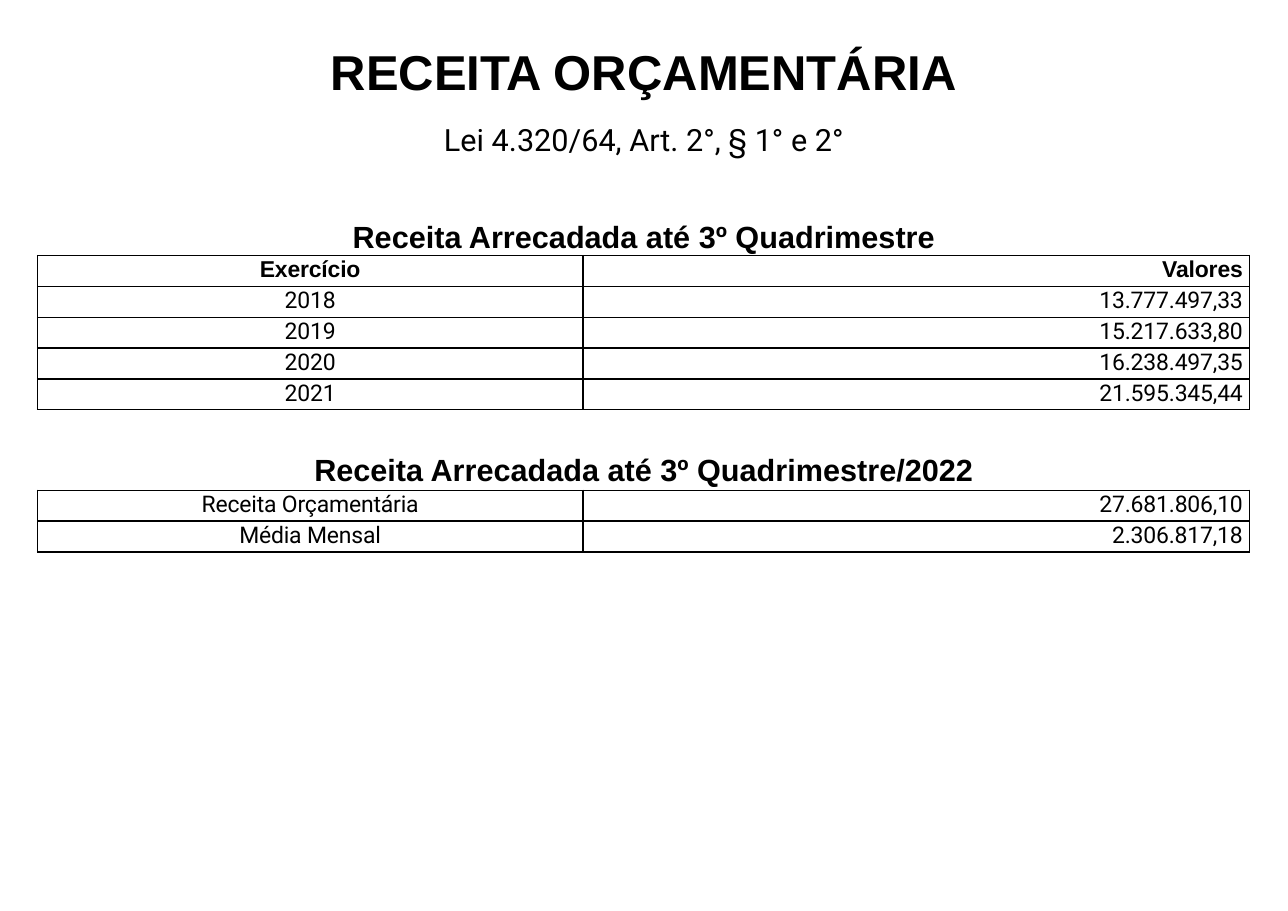
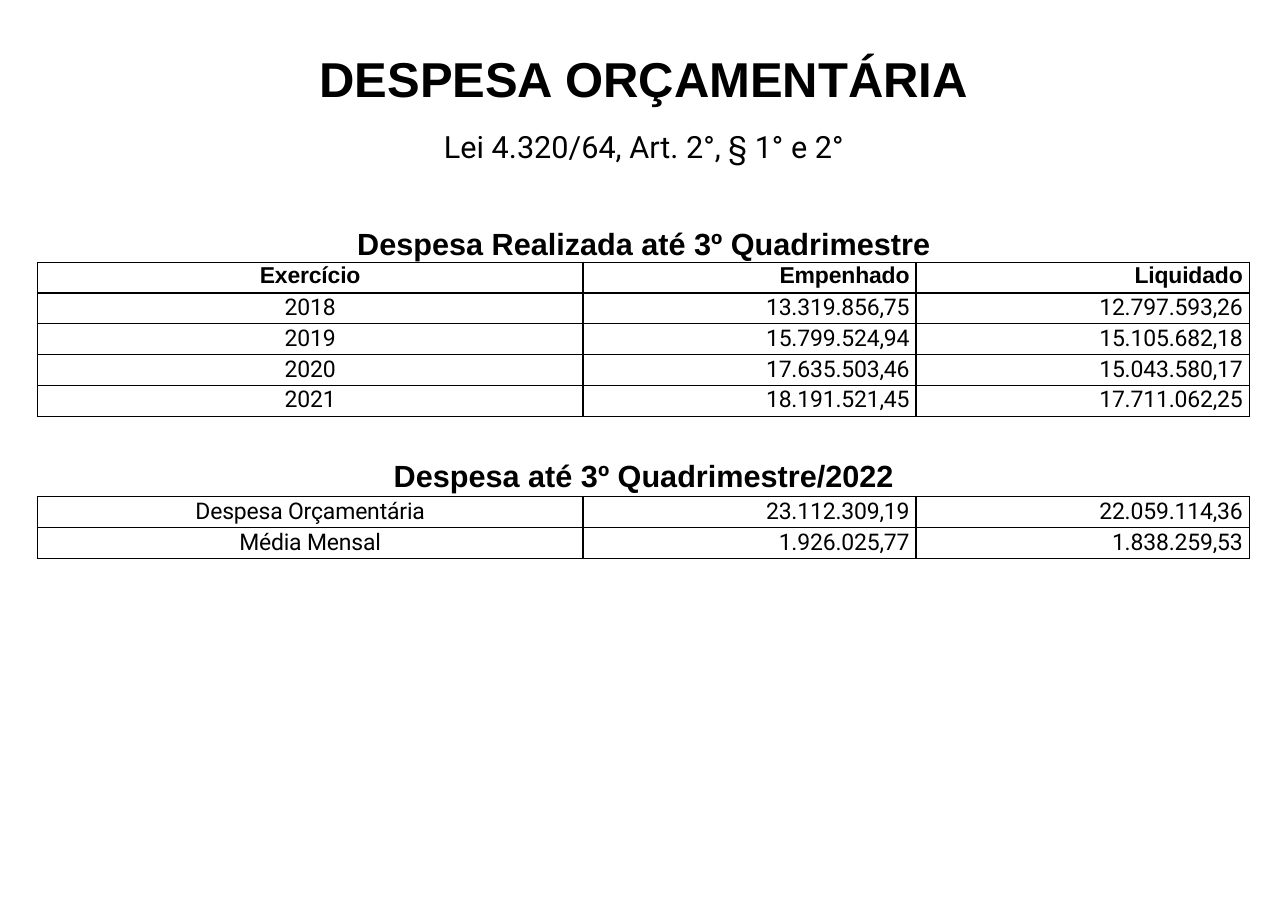
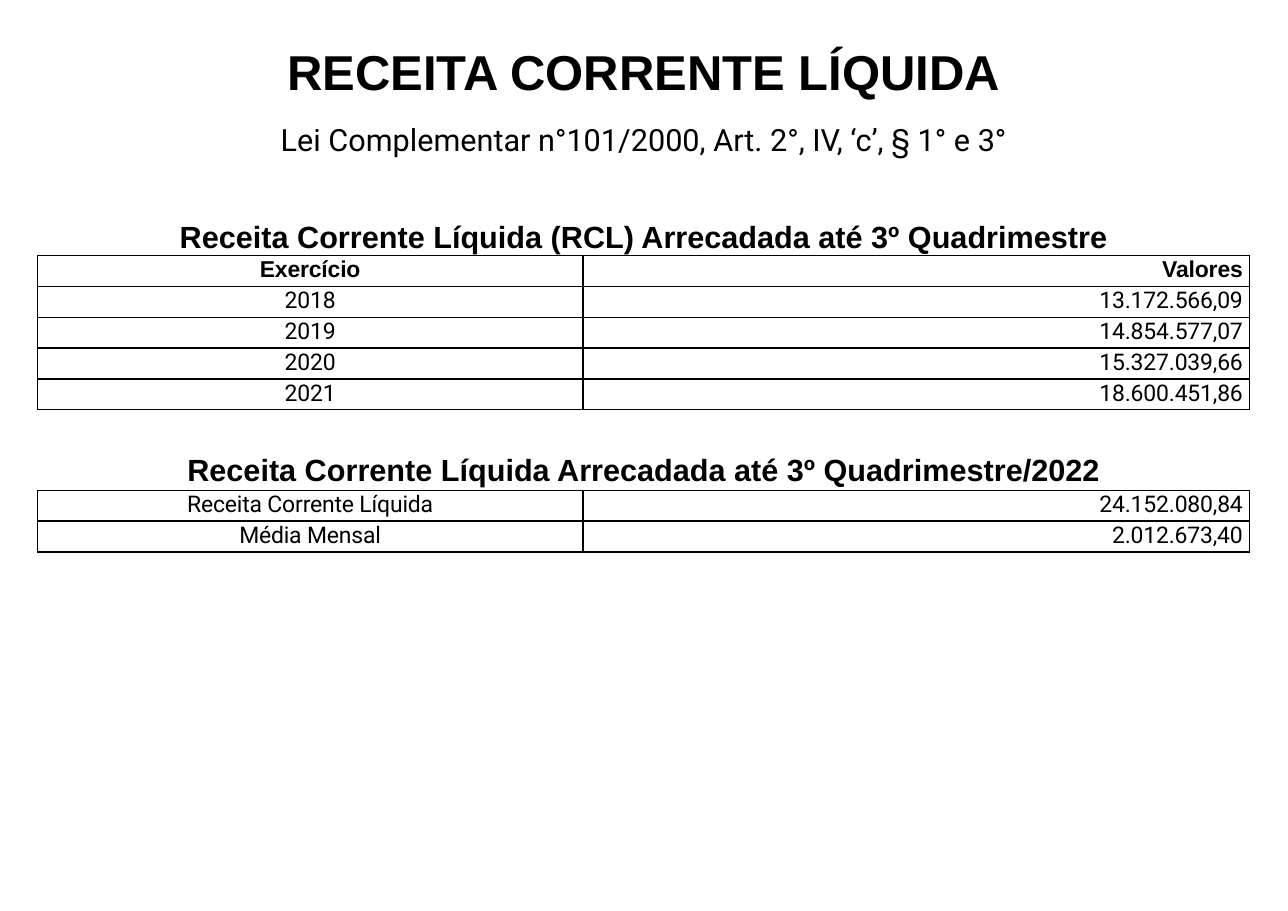
"""Builds three slides of budget tables: revenue, expenditure and net current revenue."""
import lxml.etree
import pptx
import pptx.dml.color
import pptx.enum.text
import pptx.oxml.ns
import pptx.util

Inches = pptx.util.Inches
Pt = pptx.util.Pt
ALIGN = pptx.enum.text.PP_ALIGN


def color(value):
    return pptx.dml.color.RGBColor.from_string(value)


class BudgetDeck:
    WIDTH, HEIGHT = 11.69, 8.27
    INK = "000000"
    BOLD_FONT, BODY_FONT = "Arial", "Roboto"
    TITLE_SIZE, HEADING_SIZE, CELL_SIZE = 32, 20, 15
    TABLE_LEFT, LABEL_WIDTH, VALUES_WIDTH, ROW_HEIGHT = 0.34, 4.95, 6.05, 0.28

    def __init__(self):
        self.deck = pptx.Presentation()
        self.deck.slide_width = Inches(self.WIDTH)
        self.deck.slide_height = Inches(self.HEIGHT)
        self.page = None

    def add_page(self):
        self.page = self.deck.slides.add_slide(self.deck.slide_layouts[6])

    def add_text(self, para, text, size, bold, align, before, spacing=0):
        para.alignment = align
        para.space_before = Pt(before)
        span = para.add_run()
        span.text = text
        span.font.name = self.BOLD_FONT if bold else self.BODY_FONT
        span.font.size = Pt(size)
        span.font.bold = bold
        span.font.color.rgb = color(self.INK)
        if spacing:
            span.font._element.set("spc", str(round(spacing * 100)))

    def centred_text(self, top, width, height, lines):
        left = (self.WIDTH - width) / 2
        box = self.page.shapes.add_textbox(Inches(left), Inches(top), Inches(width), Inches(height))
        frame = box.text_frame
        frame.word_wrap = True
        frame.margin_left = frame.margin_right = frame.margin_bottom = 0
        frame.margin_top = Inches(0.01)
        for index, (text, size, bold, before) in enumerate(lines):
            para = frame.add_paragraph() if index else frame.paragraphs[0]
            self.add_text(para, text, size, bold, ALIGN.CENTER, before)

    def title(self, top, width, text):
        self.centred_text(top, width, 0.56, [(text, self.TITLE_SIZE, True, 1)])

    def law_and_heading(self, top, width, law, heading):
        self.centred_text(top, width, 1.23, [
            (law, self.HEADING_SIZE, False, 1),
            (heading, self.HEADING_SIZE, True, 39.5),
        ])

    def heading(self, top, width, text):
        self.centred_text(top, width, 0.36, [(text, self.HEADING_SIZE, True, 1)])

    def border(self, cell):
        properties = cell._tc.get_or_add_tcPr()
        for side in ("a:lnL", "a:lnR", "a:lnT", "a:lnB"):
            line = lxml.etree.SubElement(properties, pptx.oxml.ns.qn(side), w=str(Pt(1)))
            fill = lxml.etree.SubElement(line, pptx.oxml.ns.qn("a:solidFill"))
            lxml.etree.SubElement(fill, pptx.oxml.ns.qn("a:srgbClr"), val=self.INK)

    def table(self, top, rows, header=False):
        value_count = len(rows[0]) - 1
        widths = [self.LABEL_WIDTH] + [self.VALUES_WIDTH / value_count] * value_count
        table = self.page.shapes.add_table(
            len(rows), len(widths), Inches(self.TABLE_LEFT), Inches(top),
            Inches(sum(widths)), Inches(self.ROW_HEIGHT * len(rows))).table
        table.first_row = header
        table.horz_banding = False
        for column, width in zip(table.columns, widths):
            column.width = Inches(width)
        for row_index, row in enumerate(rows):
            for column_index, text in enumerate(row):
                cell = table.cell(row_index, column_index)
                is_value = column_index > 0
                cell.margin_left = cell.margin_bottom = 0
                cell.margin_right = Inches(0.06 if is_value else 0)
                cell.margin_top = Inches(0.01)
                self.border(cell)
                cell.fill.background()
                self.add_text(cell.text_frame.paragraphs[0], text, self.CELL_SIZE,
                              header and row_index == 0,
                              ALIGN.RIGHT if is_value else ALIGN.CENTER, 0.6, -0.1)


BUDGET_LAW = "Lei 4.320/64, Art. 2°, § 1° e 2°"

PAGES = [
    {
        "top": 0.37,
        "title": (5.76, "RECEITA ORÇAMENTÁRIA"),
        "history_heading": (5.32, BUDGET_LAW, "Receita Arrecadada até 3º Quadrimestre"),
        "history": [
            ("Exercício", "Valores"),
            ("2018", "13.777.497,33"),
            ("2019", "15.217.633,80"),
            ("2020", "16.238.497,35"),
            ("2021", "21.595.345,44"),
        ],
        "current_heading": (6.01, "Receita Arrecadada até 3º Quadrimestre/2022"),
        "current": [
            ("Receita Orçamentária", "27.681.806,10"),
            ("Média Mensal", "2.306.817,18"),
        ],
    },
    {
        "top": 0.43,
        "title": (5.93, "DESPESA ORÇAMENTÁRIA"),
        "history_heading": (5.22, BUDGET_LAW, "Despesa Realizada até 3º Quadrimestre"),
        "history": [
            ("Exercício", "Empenhado", "Liquidado"),
            ("2018", "13.319.856,75", "12.797.593,26"),
            ("2019", "15.799.524,94", "15.105.682,18"),
            ("2020", "17.635.503,46", "15.043.580,17"),
            ("2021", "18.191.521,45", "17.711.062,25"),
        ],
        "current_heading": (4.56, "Despesa até 3º Quadrimestre/2022"),
        "current": [
            ("Despesa Orçamentária", "23.112.309,19", "22.059.114,36"),
            ("Média Mensal", "1.926.025,77", "1.838.259,53"),
        ],
    },
    {
        "top": 0.37,
        "title": (6.55, "RECEITA CORRENTE LÍQUIDA"),
        "history_heading": (8.45, "Lei Complementar n°101/2000, Art. 2°, IV, ‘c’, § 1° e 3°",
                            "Receita Corrente Líquida (RCL) Arrecadada até 3º Quadrimestre"),
        "history": [
            ("Exercício", "Valores"),
            ("2018", "13.172.566,09"),
            ("2019", "14.854.577,07"),
            ("2020", "15.327.039,66"),
            ("2021", "18.600.451,86"),
        ],
        "current_heading": (8.31, "Receita Corrente Líquida Arrecadada até 3º Quadrimestre/2022"),
        "current": [
            ("Receita Corrente Líquida", "24.152.080,84"),
            ("Média Mensal", "2.012.673,40"),
        ],
    },
]


def main():
    budget = BudgetDeck()
    for content in PAGES:
        top = content["top"]
        budget.add_page()
        budget.title(top, *content["title"])
        budget.law_and_heading(top + 0.72, *content["history_heading"])
        budget.table(top + 1.95, content["history"], header=True)
        budget.heading(top + 3.71, *content["current_heading"])
        budget.table(top + 4.08, content["current"])
    budget.deck.save("out.pptx")


if __name__ == "__main__":
    main()
